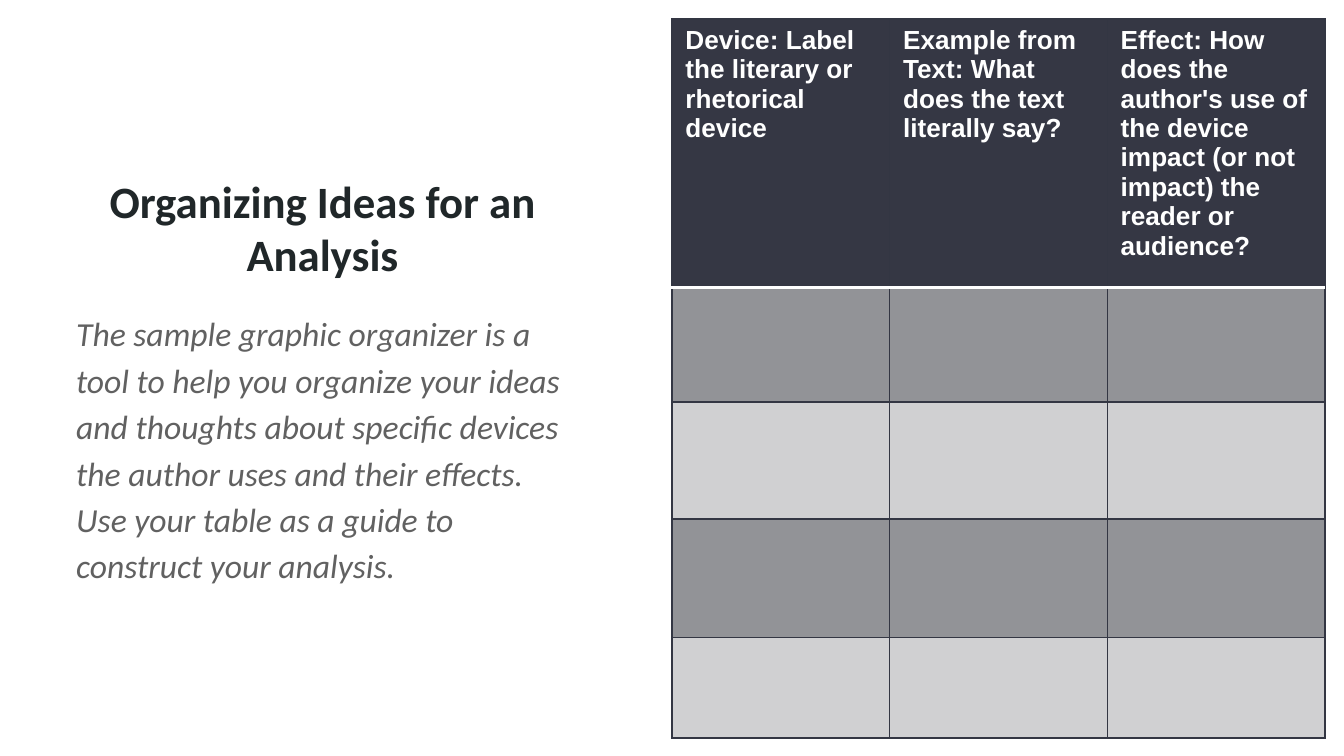
import pptx
import pptx.dml.color
import pptx.enum.text
import pptx.oxml
import pptx.oxml.ns
import pptx.util
from lxml import etree

Cm = pptx.util.Cm
Pt = pptx.util.Pt

COLORS = {
    "title": "202729",
    "guidance": "616161",
    "header": "353744",
    "grid": "333643",
    "dark_row": "929397",
    "light_row": "D0D0D2",
    "white": "FFFFFF",
}
HEADINGS = [
    "Device: Label the literary or rhetorical device",
    "Example from Text: What does the text literally say?",
    "Effect: How does the author's use of the device impact (or not impact) the reader or audience?",
]
ROW_HEIGHTS = [5.08, 2.16, 2.21, 2.24, 1.9]


def rgb(name):
    return pptx.dml.color.RGBColor.from_string(COLORS[name])


def style_font(paragraph, family, size, color, bold=False, italic=False):
    font = paragraph.font
    font.name = family
    font.size = Pt(size)
    font.color.rgb = rgb(color)
    font.bold = bold
    font.italic = italic


def fill_placeholder(holder, box, text, anchor):
    holder.left, holder.top, holder.width, holder.height = (Cm(n) for n in box)
    frame = holder.text_frame
    frame.text = text
    frame.word_wrap = True
    frame.auto_size = pptx.enum.text.MSO_AUTO_SIZE.NONE
    frame.vertical_anchor = anchor
    frame.margin_left = frame.margin_right = Cm(0.25)
    frame.margin_top = frame.margin_bottom = Cm(0.25)
    paragraph = frame.paragraphs[0]
    paragraph.space_before = Pt(0)
    return paragraph


def add_introduction(slide, box):
    left, top, width, height = box
    title_height = 3.58
    heading = fill_placeholder(
        slide.shapes.title, (left, top, width, title_height),
        "Organizing Ideas for an Analysis", pptx.enum.text.MSO_ANCHOR.BOTTOM)
    heading.alignment = pptx.enum.text.PP_ALIGN.CENTER
    style_font(heading, "Calibri", 24, "title", bold=True)

    inset = 0.38
    guidance = fill_placeholder(
        slide.placeholders[1],
        (left + inset, top + title_height, width - 2 * inset, height - title_height),
        "The sample graphic organizer is a tool to help you organize your ideas "
        "and thoughts about specific devices the author uses and their effects. "
        "Use your table as a guide to construct your analysis.",
        pptx.enum.text.MSO_ANCHOR.TOP)
    guidance.alignment = pptx.enum.text.PP_ALIGN.LEFT
    guidance.line_spacing = 1.15
    style_font(guidance, "Calibri", 18, "guidance", italic=True)
    properties = guidance._p.get_or_add_pPr()
    properties.set("marL", "0")
    properties.set("indent", "0")
    bullet = pptx.oxml.ns.qn("a:buNone")
    properties.append(etree.Element(bullet))


def set_borders(cell, borders):
    properties = cell._tc.get_or_add_tcPr()
    for position, (side, (color, width)) in enumerate(borders.items()):
        line = pptx.oxml.parse_xml(
            f'<a:ln{side} {pptx.oxml.ns.nsdecls("a")} w="{Pt(width)}">'
            f'<a:solidFill><a:srgbClr val="{COLORS[color]}"/></a:solidFill>'
            f'</a:ln{side}>')
        properties.insert(position, line)


def add_organizer(slide, box):
    organizer = slide.shapes.add_table(
        len(ROW_HEIGHTS), len(HEADINGS), *(Cm(n) for n in box)).table
    organizer.horz_banding = False
    for column in organizer.columns:
        column.width = Cm(box[2] / len(HEADINGS))
    for row_index, row_height in enumerate(ROW_HEIGHTS):
        organizer.rows[row_index].height = Cm(row_height)
        band = "dark_row" if row_index % 2 else "light_row"
        for column_index, heading in enumerate(HEADINGS):
            cell = organizer.cell(row_index, column_index)
            cell.fill.solid()
            cell.fill.fore_color.rgb = rgb("header" if row_index == 0 else band)
            borders = dict.fromkeys("LRTB", ("grid", 0.75))
            if row_index == 0:
                cell.text = heading
                style_font(cell.text_frame.paragraphs[0], "Arial", 14, "white", bold=True)
                borders["B"] = ("white", 2)
            elif row_index == 1:
                borders["T"] = ("white", 2)
            set_borders(cell, borders)


def main():
    deck = pptx.Presentation()
    deck.slide_width = Cm(25.4)
    deck.slide_height = Cm(14.29)
    slide = deck.slides.add_slide(deck.slide_layouts[1])
    add_introduction(slide, (0.81, 1.98, 10.57, 11.98))
    add_organizer(slide, (12.7, 0.36, 12.34, sum(ROW_HEIGHTS)))
    deck.save("out.pptx")


if __name__ == "__main__":
    main()
